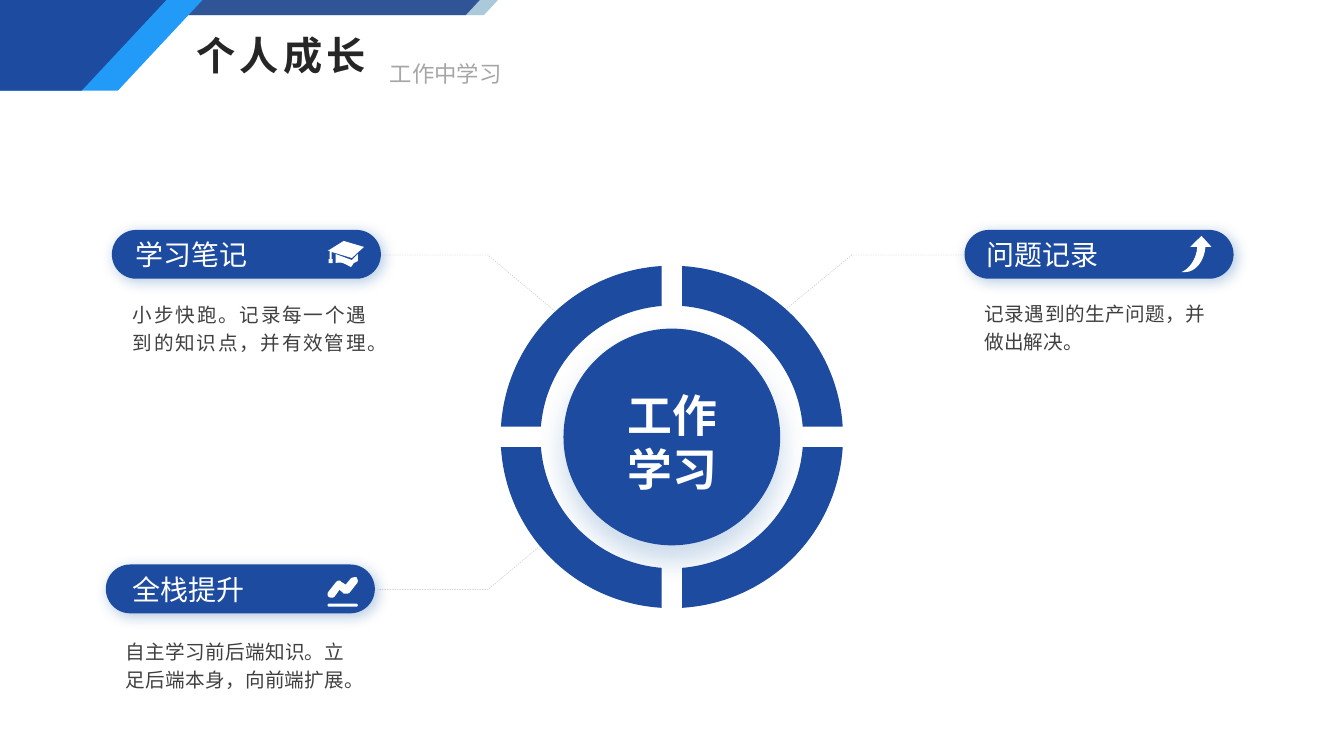
import math
from dataclasses import dataclass

from lxml import etree
from pptx import Presentation
from pptx.dml.color import RGBColor
from pptx.enum.dml import MSO_LINE
from pptx.enum.shapes import MSO_SHAPE
from pptx.enum.text import MSO_ANCHOR, MSO_AUTO_SIZE, PP_ALIGN
from pptx.oxml.ns import qn
from pptx.util import Pt

LEFT, CENTER, JUSTIFY = PP_ALIGN.LEFT, PP_ALIGN.CENTER, PP_ALIGN.JUSTIFY
TOP, FIT_SHAPE, DASH = MSO_ANCHOR.TOP, MSO_AUTO_SIZE.SHAPE_TO_FIT_TEXT, MSO_LINE.DASH
ELLIPSE, PILL = MSO_SHAPE.OVAL, MSO_SHAPE.ROUNDED_RECTANGLE
PARALLELOGRAM = MSO_SHAPE.PARALLELOGRAM


@dataclass(frozen=True)
class Theme:
    font: str = "Noto Sans CJK SC"
    blue: str = "1D4BA0"
    bright: str = "229BF8"
    steel: str = "2F5597"
    pale: str = "1A6D9F"
    shadow: str = "0B54A2"
    white: str = "FFFFFF"
    title: str = "262626"
    subtitle: str = "A6A6A6"
    body: str = "404040"
    leader: str = "BFBFBF"
    title_size: int = 28
    subtitle_size: int = 16
    hub_size: int = 32
    label_size: int = 20
    body_size: int = 14


@dataclass(frozen=True)
class Style:
    size: int
    color: str
    bold: bool = False
    align: int = LEFT
    line_spacing: float | None = None
    tracking: float = 0
    wrap: bool = True


@dataclass(frozen=True)
class Shadow:
    alpha: int
    blur: float
    distance: float
    angle: int


@dataclass(frozen=True)
class Topic:
    label: str
    note: str
    pill: tuple[float, float]
    label_box: tuple[float, float, float, float]
    note_box: tuple[float, float, float, float]
    icon_at: tuple[float, float]
    icon: list
    leader: list
    tracking: float = 0


THEME = Theme()
PILL_SIZE = (192.2, 34.9)
HUB_CENTER, HUB_RADIUS = (479.9, 312.1), 77.4
RING_OUTER, RING_INNER, RING_HALF_GAP = 122.3, 93.8, 7.3

# Icon outlines: pairs are corners, sextuples are cubic curves
CAP = [
    [(11.5, 0), (26, 4.3), (17.3, 12.2), (2.9, 7.9), (2.9, 13), (3.6, 13), (3.6, 15.8),
     (0.7, 15.8), (0.7, 13), (1.4, 13), (1.4, 7.2), (0, 7.2)],
    [(5.8, 9.4), (17.3, 13.7), (21.6, 9.4), (21.6, 14.4), (21.6, 14.4, 20.2, 15.1, 18.7, 15.8),
     (18, 17.3, 16.6, 18.7, 16.6, 18.7), (16.6, 18.7, 13, 16.6, 10.8, 15.8),
     (8.6, 15.1, 5.8, 15.8, 5.8, 15.8)],
]
ARROW = [
    [(17.3, 7.9), (21.6, 7.9), (14.4, 0), (6.5, 7.9), (11.5, 7.9),
     (10.8, 16.6, 5.8, 23.8, 0, 25.9), (2.9, 25.9), (10.1, 25.9, 16.6, 18, 17.3, 7.9)],
]
TREND = [
    [(0.7, 14.4), (0.7, 14.4, 0, 13.7, 0, 13), (0, 12.2, 0, 11.5, 0.7, 10.8), (5.8, 4.3),
     (6.5, 3.6, 7.2, 2.9, 7.9, 2.9), (8.6, 2.9, 9.4, 2.9, 9.4, 3.6), (13, 5.8), (16.6, 1.4),
     (17.3, 0.7, 18, 0.7, 18.7, 0.7), (19.4, 0, 20.2, 0.7, 20.9, 0.7),
     (20.9, 1.4, 21.6, 2.2, 21.6, 2.9), (21.6, 3.6, 21.6, 4.3, 20.9, 5), (15.8, 11.5),
     (15.1, 12.2, 14.4, 12.2, 13.7, 12.2), (11.5, 12.2), (8.6, 9.4), (5, 14.4),
     (4.3, 15.1, 3.6, 15.1, 2.9, 15.1), (2.2, 15.1, 1.4, 15.1, 0.7, 14.4)],
    [(1.2, 19.4), (20.4, 19.4), (22, 19.4, 22, 21.6, 20.4, 21.6), (1.2, 21.6),
     (-0.4, 21.6, -0.4, 19.4, 1.2, 19.4)],
]

TOPICS = [
    Topic("学习笔记", "小步快跑。记录每一个遇到的知识点，并有效管理。", (79.9, 164.2),
          (96.5, 169.9, 143.3, 24.5), (95, 213.1, 167.8, 38.9), (234, 172.1), CAP,
          [(396.7, 222.5), (348.5, 182.2), (270, 182.2)], tracking=1),
    Topic("全栈提升", "自主学习前后端知识。立足后端本身，向前端扩展。", (75.6, 403.2),
          (94.3, 409, 147.6, 24.5), (90, 453.6, 156.2, 38.9), (234, 411.8), TREND,
          [(396.7, 380.9), (348.5, 421.2), (270, 421.2)]),
    Topic("问题记录", "记录遇到的生产问题，并做出解决。", (689, 164.2),
          (704.9, 169.9, 136.1, 24.5), (703.4, 212.4, 157.7, 38.9), (843.8, 168.5), ARROW,
          [(559.4, 222.5), (608.4, 182.2), (690.5, 182.2)]),
]


def paint(shape, color: str, alpha: int = 100, shadow: Shadow | None = None) -> None:
    shape.fill.solid()
    shape.fill.fore_color.rgb = RGBColor.from_string(color)
    shape.line.fill.background()
    shape.shadow.inherit = False
    if alpha < 100:
        solid = shape.element.spPr.find(qn("a:solidFill"))
        etree.SubElement(solid[0], qn("a:alpha"), val=str(alpha * 1000))
    if shadow:
        effects = shape.element.spPr.find(qn("a:effectLst"))
        outer = etree.SubElement(effects, qn("a:outerShdw"), blurRad=str(Pt(shadow.blur)),
                                 dist=str(Pt(shadow.distance)), dir=str(shadow.angle * 60000),
                                 algn="ctr", rotWithShape="0")
        tint = etree.SubElement(outer, qn("a:srgbClr"), val=THEME.shadow)
        etree.SubElement(tint, qn("a:alpha"), val=str(shadow.alpha * 1000))


def add_preset(slide, kind: int, box: tuple, color: str, **look):
    preset = slide.shapes.add_shape(kind, *map(Pt, box))
    paint(preset, color, **look)
    return preset


def add_outline(slide, points: list, closed: bool = True):
    corners = [(Pt(x), Pt(y)) for x, y in points]
    builder = slide.shapes.build_freeform(*corners[0], scale=1.0)
    builder.add_line_segments(corners[1:], close=closed)
    return builder.convert_to_shape()


def flatten(steps: list, origin: tuple, pieces: int = 8) -> list:
    points = []
    for step in steps:
        if len(step) == 2:
            points.append(step)
            continue
        (x0, y0), (x1, y1, x2, y2, x3, y3) = points[-1], step
        for t in (i / pieces for i in range(1, pieces + 1)):
            a, b, c, d = (1 - t) ** 3, 3 * t * (1 - t) ** 2, 3 * t * t * (1 - t), t ** 3
            points.append((a * x0 + b * x1 + c * x2 + d * x3, a * y0 + b * y1 + c * y2 + d * y3))
    return [(origin[0] + x, origin[1] + y) for x, y in points]


def ring_quarter(sign_x: int, sign_y: int, pieces: int = 40) -> list:
    def arc(radius: float) -> list:
        start = math.asin(RING_HALF_GAP / radius)
        sweep = math.pi / 2 - 2 * start
        angles = [start + sweep * i / pieces for i in range(pieces + 1)]
        return [(HUB_CENTER[0] + sign_x * radius * math.cos(angle),
                 HUB_CENTER[1] + sign_y * radius * math.sin(angle)) for angle in angles]
    return arc(RING_OUTER) + arc(RING_INNER)[::-1]


def write(holder, text: str, style: Style) -> None:
    frame = holder.text_frame
    frame.text = text
    frame.word_wrap = style.wrap
    frame.auto_size = FIT_SHAPE
    frame.vertical_anchor = TOP
    for paragraph in frame.paragraphs:
        paragraph.alignment = style.align
        paragraph.line_spacing = style.line_spacing
        for run in paragraph.runs:
            run.font.name, run.font.size, run.font.bold = THEME.font, Pt(style.size), style.bold
            run.font.color.rgb = RGBColor.from_string(style.color)
            properties = run.font._element
            properties.set("lang", "zh-CN")
            properties.set("spc", str(int(style.tracking * 100)))
            etree.SubElement(properties, qn("a:ea"), typeface=THEME.font)


def add_text(slide, box: tuple, text: str, style: Style, inset: bool = False) -> None:
    holder = slide.shapes.add_textbox(*map(Pt, box))
    write(holder, text, style)
    if not inset:
        frame = holder.text_frame
        frame.margin_left = frame.margin_right = frame.margin_top = frame.margin_bottom = 0


def add_header(slide) -> None:
    for left, color, alpha in ((85, THEME.pale, 37), (72, THEME.steel, 100)):
        band = add_preset(slide, PARALLELOGRAM, (left, 0, 270.7, 10.8), color, alpha=alpha)
        band.adjustments[0] = 0.929
    for left, right, color in ((-2.2, 144.7, THEME.bright), (-1.4, 118.8, THEME.blue)):
        paint(add_outline(slide, [(left, 0), (right, 0), (right - 60.5, 64.8), (left, 64.8)]), color)
    title = slide.shapes.title
    title.left, title.top, title.width, title.height = map(Pt, (133.2, 18.7, 138.2, 41))
    write(title, "个人成长", Style(THEME.title_size, THEME.title, bold=True, line_spacing=1.0,
                               tracking=3, wrap=False))
    add_text(slide, (271.4, 39.6, 95, 26.6), "工作中学习",
             Style(THEME.subtitle_size, THEME.subtitle, wrap=False), inset=True)


def add_leader(slide, points: list) -> None:
    leader = add_outline(slide, points, closed=False)
    leader.fill.background()
    leader.line.color.rgb = RGBColor.from_string(THEME.leader)
    leader.line.width, leader.line.dash_style = Pt(0.25), DASH
    leader.shadow.inherit = False


def add_hub(slide) -> None:
    for sign_x, sign_y in ((1, 1), (-1, -1), (1, -1), (-1, 1)):
        paint(add_outline(slide, ring_quarter(sign_x, sign_y)), THEME.blue)
    corner = [middle - HUB_RADIUS for middle in HUB_CENTER]
    add_preset(slide, ELLIPSE, (*corner, 2 * HUB_RADIUS, 2 * HUB_RADIUS), THEME.blue,
               shadow=Shadow(21, 20, 11, 90))
    add_text(slide, (409.7, 277.2, 141.8, 77.8), "工作\n学习",
             Style(THEME.hub_size, THEME.white, bold=True, align=CENTER))


def add_topic(slide, topic: Topic) -> None:
    add_text(slide, topic.note_box, topic.note,
             Style(THEME.body_size, THEME.body, align=JUSTIFY, line_spacing=1.2,
                   tracking=topic.tracking))
    pill = add_preset(slide, PILL, (*topic.pill, *PILL_SIZE), THEME.blue,
                      shadow=Shadow(30, 10, 3, 45))
    pill.adjustments[0] = 0.5
    add_text(slide, topic.label_box, topic.label, Style(THEME.label_size, THEME.white))
    for contour in topic.icon:
        paint(add_outline(slide, flatten(contour, topic.icon_at)), THEME.white)


def main() -> None:
    deck = Presentation()
    deck.slide_width, deck.slide_height = Pt(960), Pt(540)
    slide = deck.slides.add_slide(deck.slide_layouts[5])
    add_header(slide)
    for topic in TOPICS:
        add_leader(slide, topic.leader)
    add_hub(slide)
    for topic in TOPICS:
        add_topic(slide, topic)
    deck.save("out.pptx")


if __name__ == "__main__":
    main()
